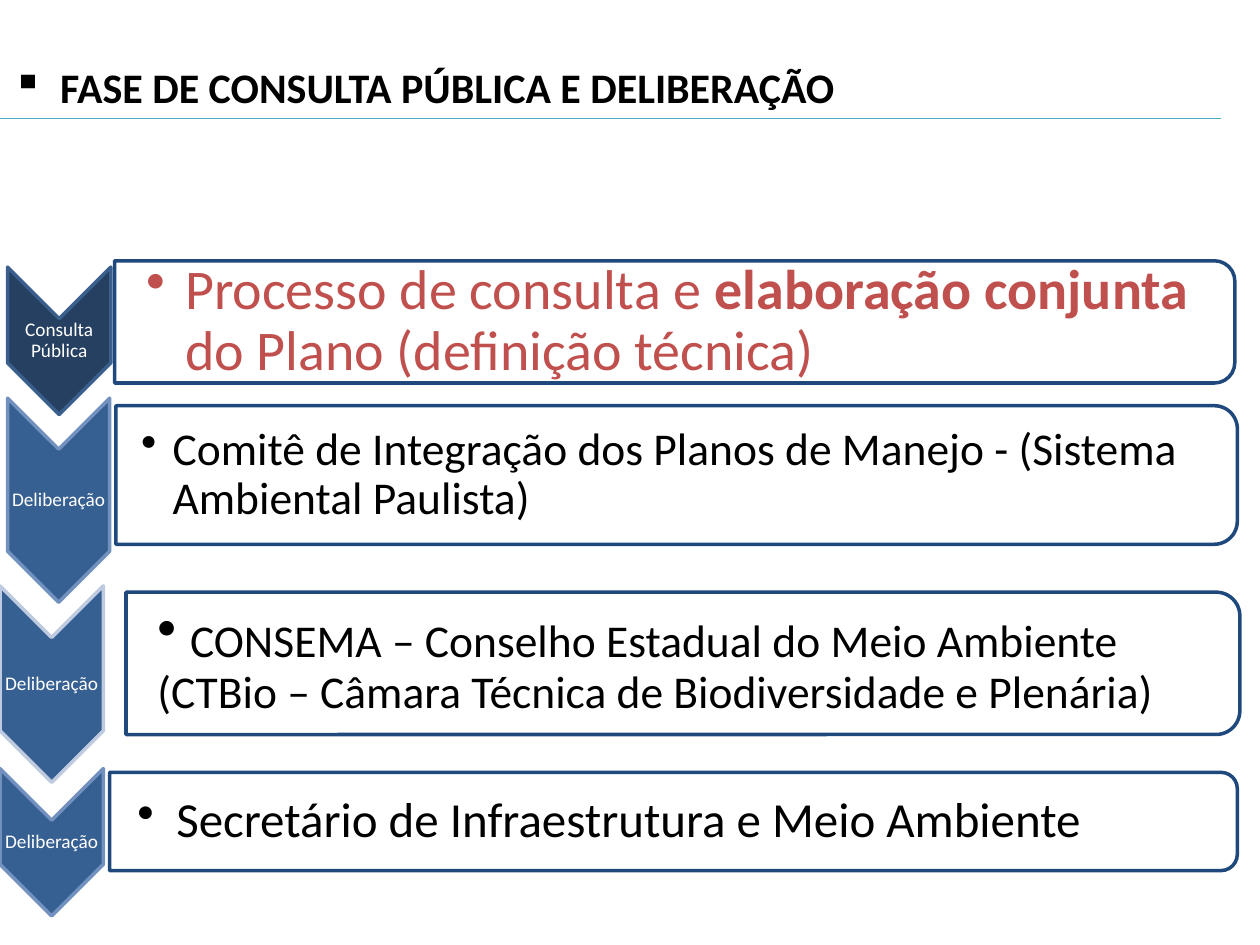
from lxml import etree
from pptx import Presentation
from pptx.dml.color import RGBColor
from pptx.enum.shapes import MSO_CONNECTOR, MSO_SHAPE
from pptx.enum.text import MSO_ANCHOR, PP_ALIGN
from pptx.oxml.ns import qn
from pptx.util import Inches, Pt

CHEVRON = MSO_SHAPE.CHEVRON
PANEL = MSO_SHAPE.ROUND_2_SAME_RECTANGLE
STRAIGHT = MSO_CONNECTOR.STRAIGHT
MIDDLE = MSO_ANCHOR.MIDDLE
CENTER = PP_ALIGN.CENTER

BLACK = RGBColor(0x00, 0x00, 0x00)
WHITE = RGBColor(0xFF, 0xFF, 0xFF)
RED = RGBColor(0xC0, 0x50, 0x4D)
TEAL = RGBColor(0x4B, 0xAC, 0xC6)
NAVY = RGBColor(0x1F, 0x49, 0x7D)
DARK = RGBColor(0x25, 0x40, 0x61)
BLUE = RGBColor(0x37, 0x60, 0x92)
DARK_EDGE = RGBColor(0x3A, 0x5F, 0x8C)
BLUE_EDGE = RGBColor(0x73, 0x91, 0xBF)
PALE_EDGE = RGBColor(0xBE, 0xCA, 0xDF)

FONT = "Calibri"
TITLE = "FASE DE CONSULTA PÚBLICA E DELIBERAÇÃO"

STEPS = [
    dict(label="Consulta Pública", fill=DARK, edge=DARK_EDGE,
         arrow=(0.06, 2.12, 0.82, 1.17), panel=(0.91, 2.07, 8.89, 0.97),
         inset=0.25, indent=0.31, color=RED,
         runs=[("Processo de consulta e ", 32, False),
               ("elaboração conjunta ", 32, True),
               ("do Plano (definição técnica)", 32, False)]),
    dict(label="Deliberação", fill=BLUE, edge=BLUE_EDGE,
         arrow=(0.06, 3.16, 0.81, 1.62), panel=(0.92, 3.22, 8.9, 1.1),
         inset=0.2, indent=0.25, color=BLACK,
         runs=[("Comitê de Integração dos Planos de Manejo - "
                "(Sistema Ambiental Paulista)", 26, False)]),
    dict(label="Deliberação", fill=BLUE, edge=PALE_EDGE,
         arrow=(0, 4.65, 0.82, 1.56), panel=(1, 4.7, 8.84, 1.13),
         inset=0.25, indent=0, color=BLACK,
         runs=[(" ", 32, False),
               ("CONSEMA – Conselho Estadual do Meio Ambiente "
                "(CTBio – Câmara Técnica de Biodiversidade e Plenária)", 26, False)]),
    dict(label="Deliberação", fill=BLUE, edge=BLUE_EDGE,
         arrow=(0, 6.1, 0.82, 1.17), panel=(0.87, 6.13, 8.95, 0.78),
         inset=0.22, indent=0.31, color=BLACK,
         runs=[("Secretário de Infraestrutura e Meio Ambiente", 28, False)]),
]


def add_turned(slide, preset, box, fill, edge):
    left, top, width, height = box
    shape = slide.shapes.add_shape(
        preset, Inches(left + (width - height) / 2), Inches(top + (height - width) / 2),
        Inches(height), Inches(width))
    shape.rotation = 90
    shape.shadow.inherit = False
    shape.fill.solid()
    shape.fill.fore_color.rgb = fill
    shape.line.color.rgb = edge
    shape.line.width = Pt(2)
    return shape


def add_text(slide, box, runs, color, insets):
    frame = slide.shapes.add_textbox(*map(Inches, box)).text_frame
    frame.word_wrap = True
    frame.vertical_anchor = MIDDLE
    (frame.margin_left, frame.margin_top,
     frame.margin_right, frame.margin_bottom) = map(Inches, insets)
    paragraph = frame.paragraphs[0]
    paragraph.font.name = FONT
    paragraph.font.color.rgb = color
    for words, size, bold in runs:
        run = paragraph.add_run()
        run.text = words
        run.font.size = Pt(size)
        run.font.bold = bold
    return paragraph


def set_bullet(paragraph, mark, indent):
    properties = paragraph._p.get_or_add_pPr()
    properties.set("marL", str(Inches(indent)))
    properties.set("indent", str(-Inches(indent)))
    bullet = etree.Element(qn("a:buChar"), char=mark)
    defaults = properties.find(qn("a:defRPr"))
    defaults.addprevious(bullet)


def add_step(slide, step):
    left, top, width, height = step["arrow"]
    add_turned(slide, CHEVRON, step["arrow"], step["fill"], step["edge"])
    label = add_text(slide, (left, top + width / 2, width, height - width),
                     [(step["label"], 11, False)], WHITE, [0.01] * 4)
    label.alignment = CENTER
    label.line_spacing = 0.9

    left, top, width, height = step["panel"]
    panel = add_turned(slide, PANEL, step["panel"], WHITE, NAVY)
    white = panel.fill._xPr.find(qn("a:solidFill"))[0]
    etree.SubElement(white, qn("a:alpha"), val="90000")
    corner = 0.05 * height
    body = add_text(slide, (left, top + corner, width - corner, height - 2 * corner),
                    step["runs"], step["color"], (step["inset"], 0.02, 0.02, 0.02))
    body.level = 1
    body.line_spacing = 0.9
    set_bullet(body, "•", step["indent"])


def main():
    deck = Presentation()
    deck.slide_width, deck.slide_height = Inches(10), Inches(7.5)
    slide = deck.slides.add_slide(deck.slide_layouts[6])

    title = add_text(slide, (0, 0.44, 10, 0.5), [(TITLE, 24, True)], BLACK,
                     (0.1, 0.05, 0.1, 0.05))
    set_bullet(title, "▪", 0.38)

    rule = slide.shapes.add_connector(STRAIGHT, 0, Inches(0.94), Inches(9.69), Inches(0.94))
    rule.line.color.rgb = TEAL
    rule.line.width = Pt(0.75)
    etree.SubElement(rule._element.spPr, qn("a:effectLst"))

    for step in STEPS:
        add_step(slide, step)
    deck.save("out.pptx")


if __name__ == "__main__":
    main()
